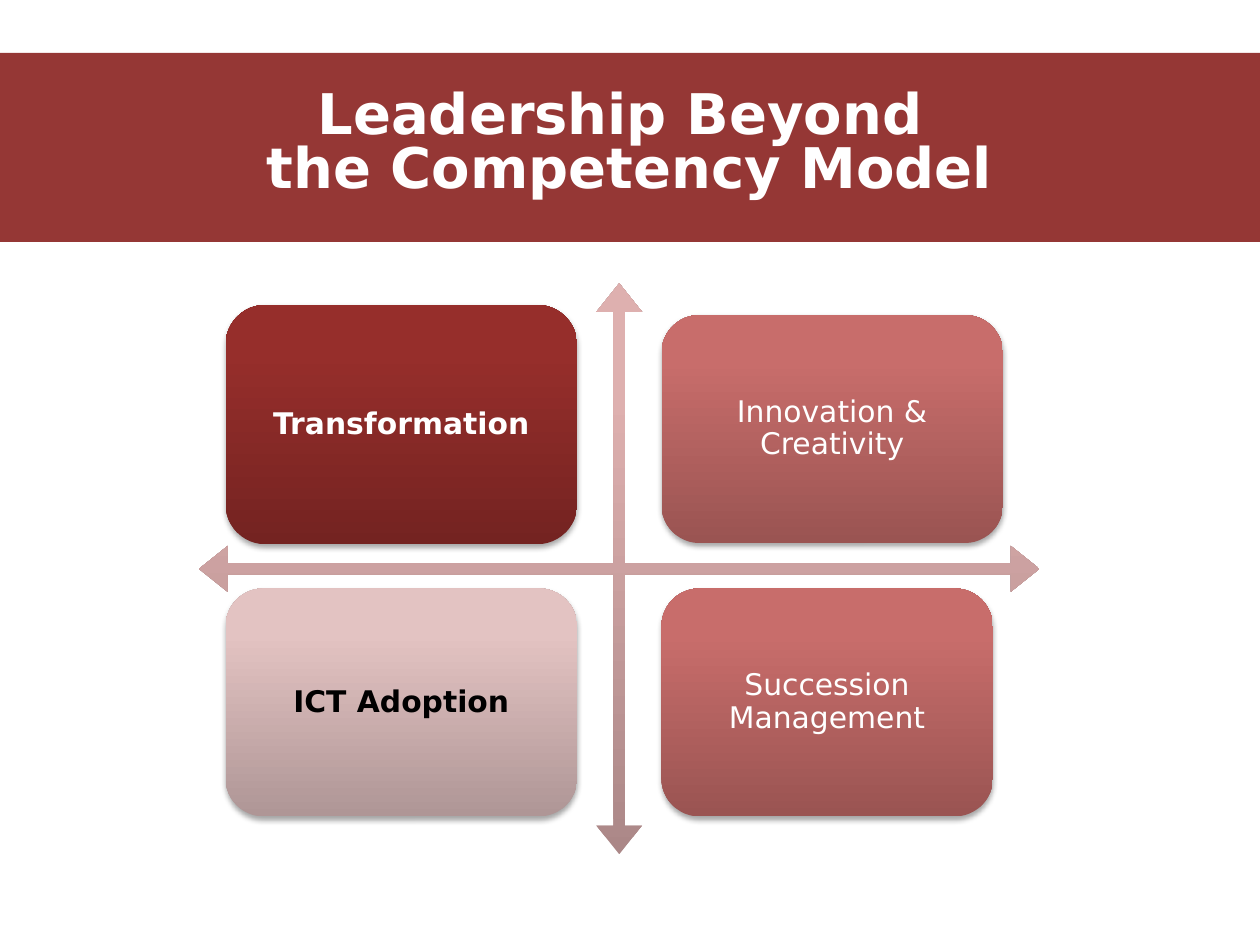
from copy import deepcopy
from dataclasses import dataclass

from lxml import etree
from pptx import Presentation
from pptx.dml.color import RGBColor
from pptx.enum.shapes import MSO_SHAPE as Shape
from pptx.enum.text import MSO_ANCHOR as Anchor, PP_ALIGN as Align
from pptx.oxml import parse_xml
from pptx.oxml.ns import nsdecls, qn
from pptx.util import Inches, Pt


@dataclass(frozen=True)
class Theme:
    font: str = "DejaVu Sans"
    title_size: int = 32
    label_size: int = 17
    band: str = "953735"
    light: str = "FFFFFF"
    dark: str = "000000"
    # Gradients run from bottom to top
    arrow: tuple = ("AB8787", "DEB0AF", "E0B0AF")
    deep: tuple = ("742321", "962E2B", "992C29")
    medium: tuple = ("9A5452", "C86D6B", "CB6B69")
    pale: tuple = ("AF9696", "E3C3C2", "E5C3C3")


theme = Theme()


def fill_gradient(shape, colors):
    """Fill upwards with stops at 0, 80 and 100 percent, without outline."""
    shape.line.fill.background()
    shape.shadow.inherit = False
    shape.fill.gradient()
    shape.fill.gradient_angle = 90
    stop_list = shape.element.spPr.find(".//" + qn("a:gsLst"))
    stop_list.append(deepcopy(stop_list[-1]))
    for stop, position, color in zip(shape.fill.gradient_stops, (0, 0.8, 1), colors):
        stop.position = position
        stop.color.rgb = RGBColor.from_string(color)


def format_text(frame, size, color, bold, spacing):
    frame.word_wrap = True
    for paragraph in frame.paragraphs:
        paragraph.alignment = Align.CENTER
        paragraph.line_spacing = spacing
        for run in paragraph.runs:
            run.font.name = theme.font
            run.font.size = Pt(size)
            run.font.bold = bold
            run.font.color.rgb = RGBColor.from_string(color)


prs = Presentation()
prs.slide_width, prs.slide_height = Inches(10), Inches(7.5)
slide = prs.slides.add_slide(prs.slide_layouts[6])

# Title band
title = slide.shapes.add_shape(
    Shape.RECTANGLE, Inches(0), Inches(0.42), Inches(10), Inches(1.5))
title.shadow.inherit = False
title.fill.solid()
title.fill.fore_color.rgb = RGBColor.from_string(theme.band)
title.line.fill.background()
title.text_frame.text = "Leadership Beyond \nthe Competency Model"
title.text_frame.vertical_anchor = Anchor.TOP
title.text_frame.margin_top = Inches(0.31)
format_text(title.text_frame, theme.title_size, theme.light, True, 0.8)

# Four-way arrow
axes = slide.shapes.add_shape(
    Shape.QUAD_ARROW, Inches(1.58), Inches(2.25), Inches(6.67), Inches(4.53))
for index, ratio in enumerate((0.02, 0.04, 0.05)):
    axes.adjustments[index] = ratio
fill_gradient(axes, theme.arrow)

# Quadrants: label, left, top, width, height, gradient, text color, bold
left, right, lower = 1.79, 5.25, 4.67
quadrants = [
    ("Transformation", left, 2.42, 2.79, 1.9, theme.deep, theme.light, True),
    ("Innovation & Creativity", right, 2.5, 2.71, 1.81, theme.medium, theme.light, False),
    ("ICT Adoption", left, lower, 2.79, 1.81, theme.pale, theme.dark, True),
    ("Succession Management", right, lower, 2.63, 1.81, theme.medium, theme.light, False),
]
for label, x, y, width, height, gradient, color, bold in quadrants:
    quadrant = slide.shapes.add_shape(
        Shape.ROUNDED_RECTANGLE, Inches(x), Inches(y), Inches(width), Inches(height))
    fill_gradient(quadrant, gradient)

    # Soft shadow below the box
    shadow = parse_xml(
        f'<a:outerShdw {nsdecls("a")} blurRad="{Pt(3.1)}" dist="{Pt(1.8)}" '
        f'dir="5400000" rotWithShape="0"><a:srgbClr val="{theme.dark}"/></a:outerShdw>')
    etree.SubElement(shadow[0], qn("a:alpha"), val="35000")
    quadrant.element.spPr.find(qn("a:effectLst")).append(shadow)

    frame = quadrant.text_frame
    frame.text = label
    frame.vertical_anchor = Anchor.MIDDLE
    frame.margin_left = frame.margin_right = Inches(0.07)
    frame.margin_top = frame.margin_bottom = Inches(0.07)
    format_text(frame, theme.label_size, color, bold, 0.9)

prs.save("out.pptx")
